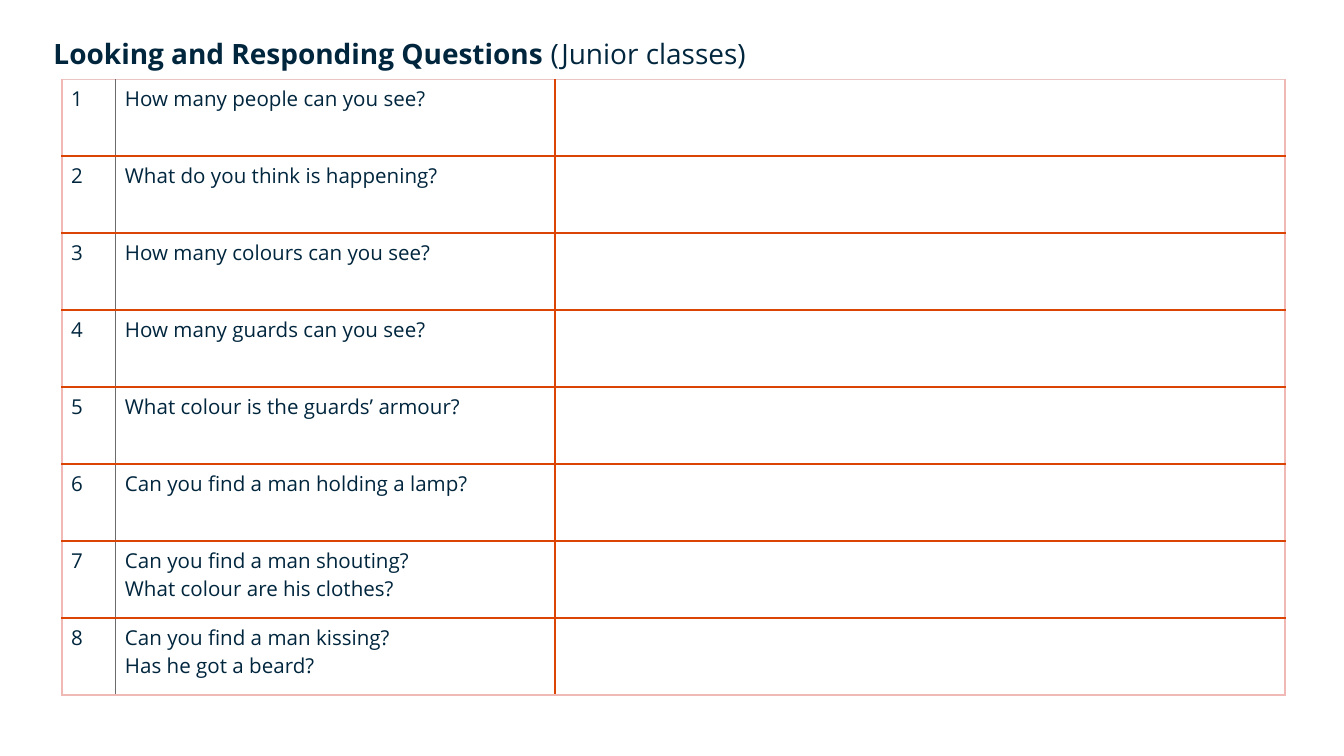
from pptx import Presentation
from pptx.dml.color import RGBColor
from pptx.oxml.ns import qn
from pptx.util import Inches, Pt
from lxml.etree import SubElement

TITLE = [("Looking and Responding Questions ", True), ("(Junior classes)", False)]
QUESTIONS = [
    "How many people can you see?",
    "What do you think is happening?",
    "How many colours can you see?",
    "How many guards can you see?",
    "What colour is the guards’ armour?",
    "Can you find a man holding a lamp?",
    "Can you find a man shouting?\nWhat colour are his clothes?",
    "Can you find a man kissing?\nHas he got a beard?",
]
COLUMN_WIDTHS = [0.4, 3.27, 5.43]
TABLE_HEIGHT = 4.58
THEME = {
    "font": "Open Sans",
    "ink": "00263E",
    "title_size": 15,
    "body_size": 11,
    "row_line": ("DC4405", 1),
    "answer_line": ("DC4405", 0.75),
    "number_line": ("6B6B6B", 0.5),
    "top_line": ("EBC4C4", 0.5),
    "outer_line": ("F0B9B5", 1),
}


def style_paragraph(paragraph, size):
    paragraph.font.name = THEME["font"]
    paragraph.font.size = Pt(size)
    paragraph.font.color.rgb = RGBColor.from_string(THEME["ink"])


def set_borders(cell, left, right, top, bottom):
    properties = cell._tc.get_or_add_tcPr()
    sides = {"a:lnL": left, "a:lnR": right, "a:lnT": top, "a:lnB": bottom}
    for tag, name in sides.items():
        color, width = THEME[name]
        line = SubElement(properties, qn(tag), w=str(Pt(width)))
        fill = SubElement(line, qn("a:solidFill"))
        SubElement(fill, qn("a:srgbClr"), val=color)


def add_title(slide):
    box = slide.shapes.add_textbox(Inches(0.3), Inches(0.22), Inches(8.97), Inches(0.35))
    box.text_frame.word_wrap = True
    paragraph = box.text_frame.paragraphs[0]
    style_paragraph(paragraph, THEME["title_size"])
    for text, bold in TITLE:
        run = paragraph.add_run()
        run.text = text
        run.font.bold = bold


def add_question_table(slide):
    row_count = len(QUESTIONS)
    table = slide.shapes.add_table(
        row_count, len(COLUMN_WIDTHS), Inches(0.46), Inches(0.59),
        Inches(sum(COLUMN_WIDTHS)), Inches(TABLE_HEIGHT),
    ).table
    table.first_row = table.horz_banding = False
    for column, width in zip(table.columns, COLUMN_WIDTHS):
        column.width = Inches(width)

    vertical_lines = ["outer_line", "number_line", "answer_line", "outer_line"]
    horizontal_lines = ["top_line"] + ["row_line"] * (row_count - 1) + ["outer_line"]
    for row_index, question in enumerate(QUESTIONS):
        for column_index, text in enumerate([str(row_index + 1), question, ""]):
            cell = table.cell(row_index, column_index)
            cell.margin_left = cell.margin_right = Inches(0.07)
            cell.margin_top = cell.margin_bottom = Inches(0.04)
            set_borders(
                cell, *vertical_lines[column_index:column_index + 2],
                *horizontal_lines[row_index:row_index + 2],
            )
            cell.fill.background()
            cell.text = text
            for paragraph in cell.text_frame.paragraphs:
                style_paragraph(paragraph, THEME["body_size"])


def main():
    presentation = Presentation()
    presentation.slide_width = Inches(10)
    presentation.slide_height = Inches(10 * 9 / 16)
    slide = presentation.slides.add_slide(presentation.slide_layouts[6])
    add_title(slide)
    add_question_table(slide)
    presentation.save("out.pptx")


if __name__ == "__main__":
    main()
